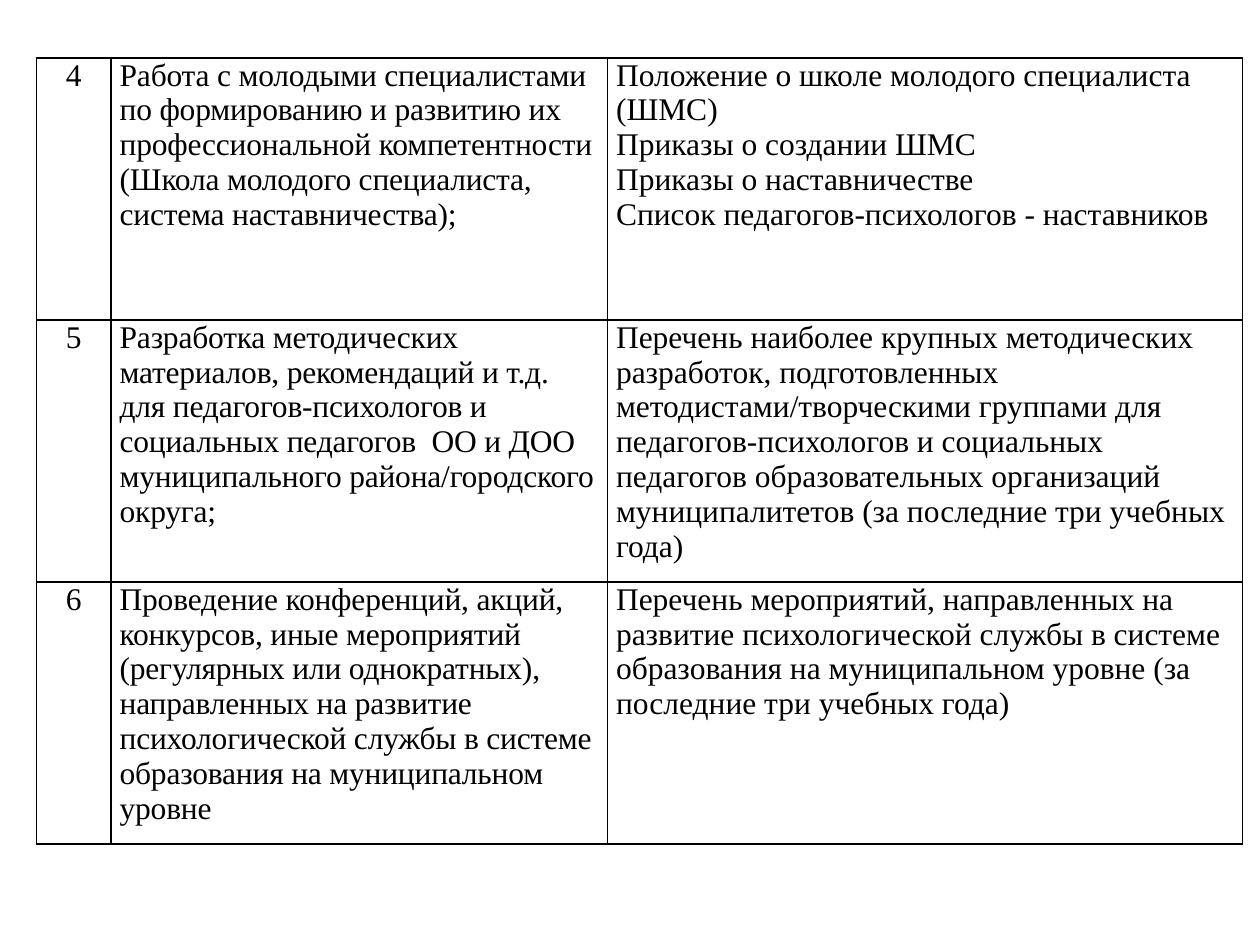
from lxml.etree import SubElement
from pptx import Presentation
from pptx.dml.color import RGBColor
from pptx.enum.text import PP_ALIGN as Align
from pptx.oxml.ns import qn
from pptx.util import Inches, Pt

FONT = "Times New Roman"
BLACK = "000000"
COLUMNS = [0.59, 3.94, 5.04]
ROW_HEIGHT = 2.08
ROWS = [
    (
        "4",
        "Работа с молодыми специалистами по формированию и развитию их "
        "профессиональной компетентности (Школа молодого специалиста, "
        "система наставничества);",
        "Положение о школе молодого специалиста (ШМС)\n"
        "Приказы о создании ШМС\n"
        "Приказы о наставничестве\n"
        "Список педагогов-психологов - наставников",
    ),
    (
        "5",
        "Разработка методических материалов, рекомендаций и т.д. для "
        "педагогов-психологов и социальных педагогов  ОО и ДОО "
        "муниципального района/городского округа;",
        "Перечень наиболее крупных методических разработок, подготовленных "
        "методистами/творческими группами для педагогов-психологов и "
        "социальных педагогов образовательных организаций муниципалитетов "
        "(за последние три учебных года)",
    ),
    (
        "6",
        "Проведение конференций, акций, конкурсов, иные мероприятий "
        "(регулярных или однократных), направленных на развитие "
        "психологической службы в системе образования на муниципальном уровне",
        "Перечень мероприятий, направленных на развитие психологической "
        "службы в системе образования на муниципальном уровне (за последние "
        "три учебных года)",
    ),
]


def rgb(color):
    """Return the colour for a hex string."""
    return RGBColor.from_string(color)


def write(tf, text, size=18, color=BLACK, align=Align.LEFT, spacing=0):
    """Write each line of text as a paragraph; spacing is in points."""
    for i, line in enumerate(text.split("\n")):
        p = tf.add_paragraph() if i else tf.paragraphs[0]
        p.alignment = align
        r = p.add_run()
        r.text = line
        r.font.name = FONT
        r.font.size = Pt(size)
        r.font.color.rgb = rgb(color)
        if spacing:
            r.font._element.set("spc", str(round(spacing * 100)))


def add_borders(cell, color=BLACK, width=1):
    """Draw a solid line on all four sides of a cell."""
    props = cell._tc.get_or_add_tcPr()
    for i, side in enumerate(("lnL", "lnR", "lnT", "lnB")):
        line = props.makeelement(qn(f"a:{side}"), {"w": str(Pt(width))})
        fill = SubElement(line, qn("a:solidFill"))
        SubElement(fill, qn("a:srgbClr"), val=color)
        props.insert(i, line)


def format_cell(cell):
    """Set the margins, empty fill and borders of a cell."""
    cell.margin_left = cell.margin_right = Inches(0.07)
    cell.margin_top = cell.margin_bottom = 0
    cell.fill.background()
    add_borders(cell)


def add_activity_table(s, left, top, columns, row_height, rows):
    """Add the table of activities and their supporting documents."""
    table = s.shapes.add_table(
        len(rows), len(columns), Inches(left), Inches(top),
        Inches(sum(columns)), Inches(row_height * len(rows)),
    ).table
    table.first_row = table.horz_banding = False
    for column, width in zip(table.columns, columns):
        column.width = Inches(width)
    formats = [{"align": Align.CENTER}, {"spacing": -0.1}, {}]
    for row, texts in zip(table.rows, rows):
        row.height = Inches(row_height)
        for cell, text, options in zip(row.cells, texts, formats):
            format_cell(cell)
            write(cell.text_frame, text, **options)


def main():
    """Build and save the slide."""
    prs = Presentation()
    prs.slide_width, prs.slide_height = Inches(10), Inches(7.5)
    s = prs.slides.add_slide(prs.slide_layouts[6])
    add_activity_table(s, 0.29, 0.46, COLUMNS, ROW_HEIGHT, ROWS)
    prs.save("out.pptx")


if __name__ == "__main__":
    main()
